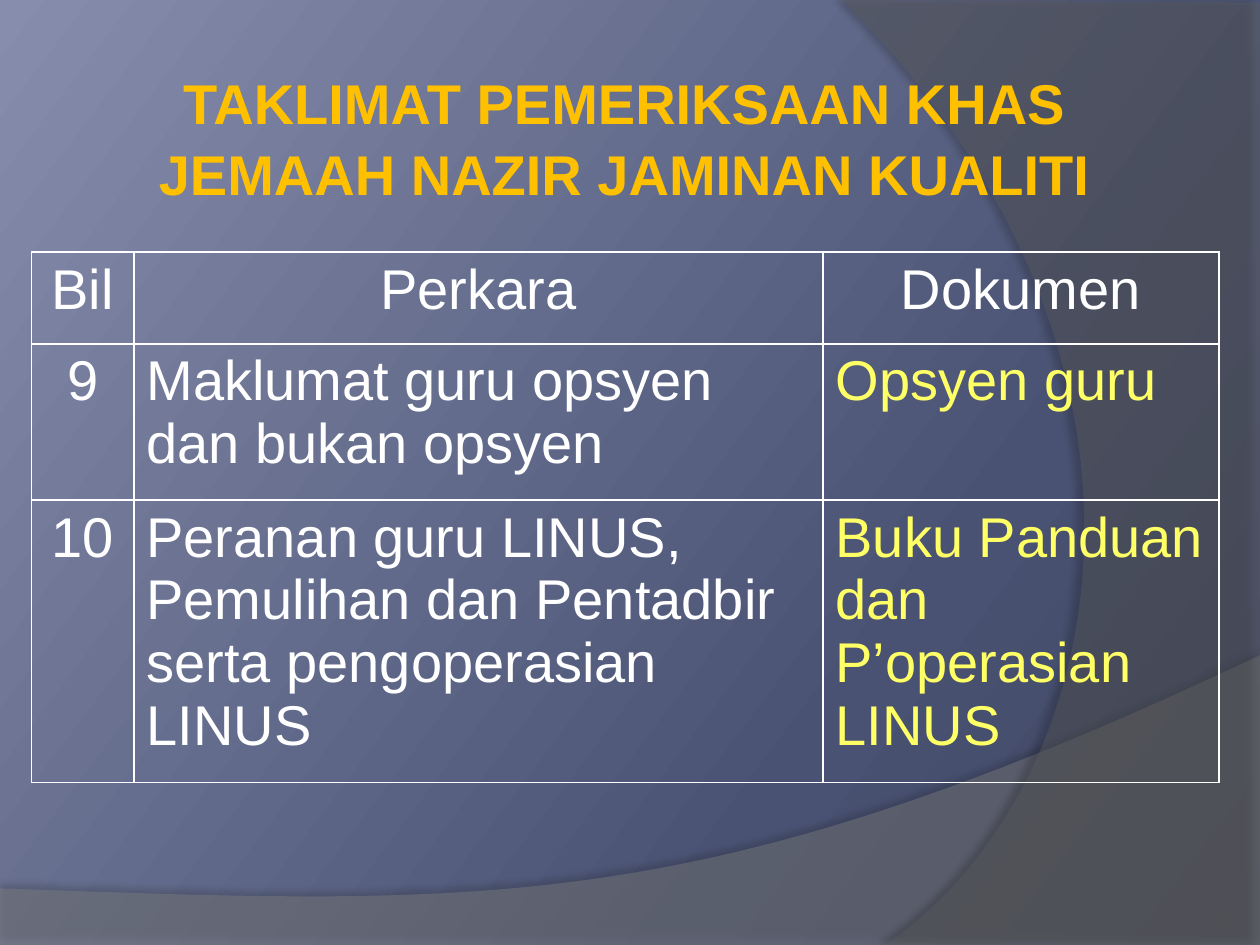
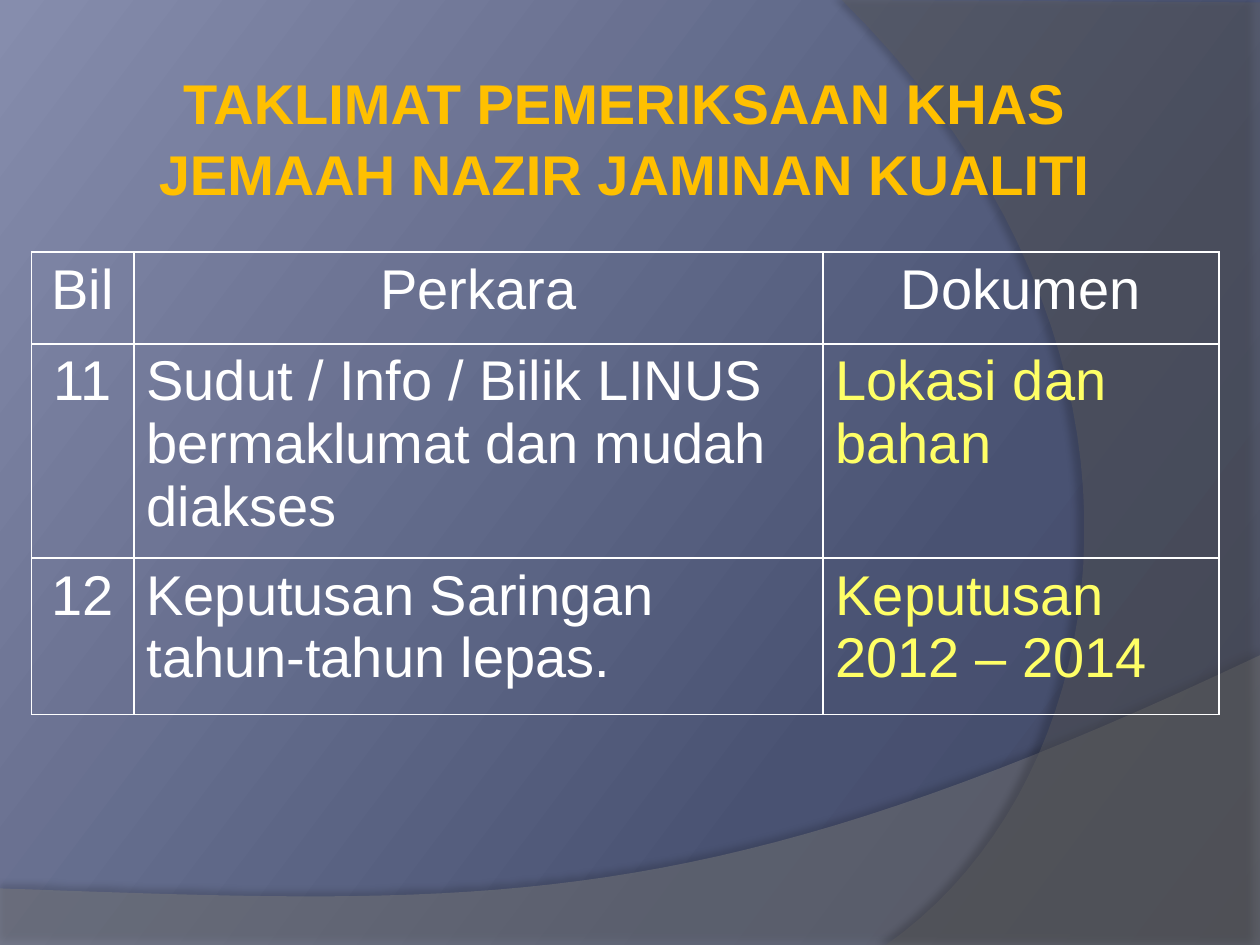
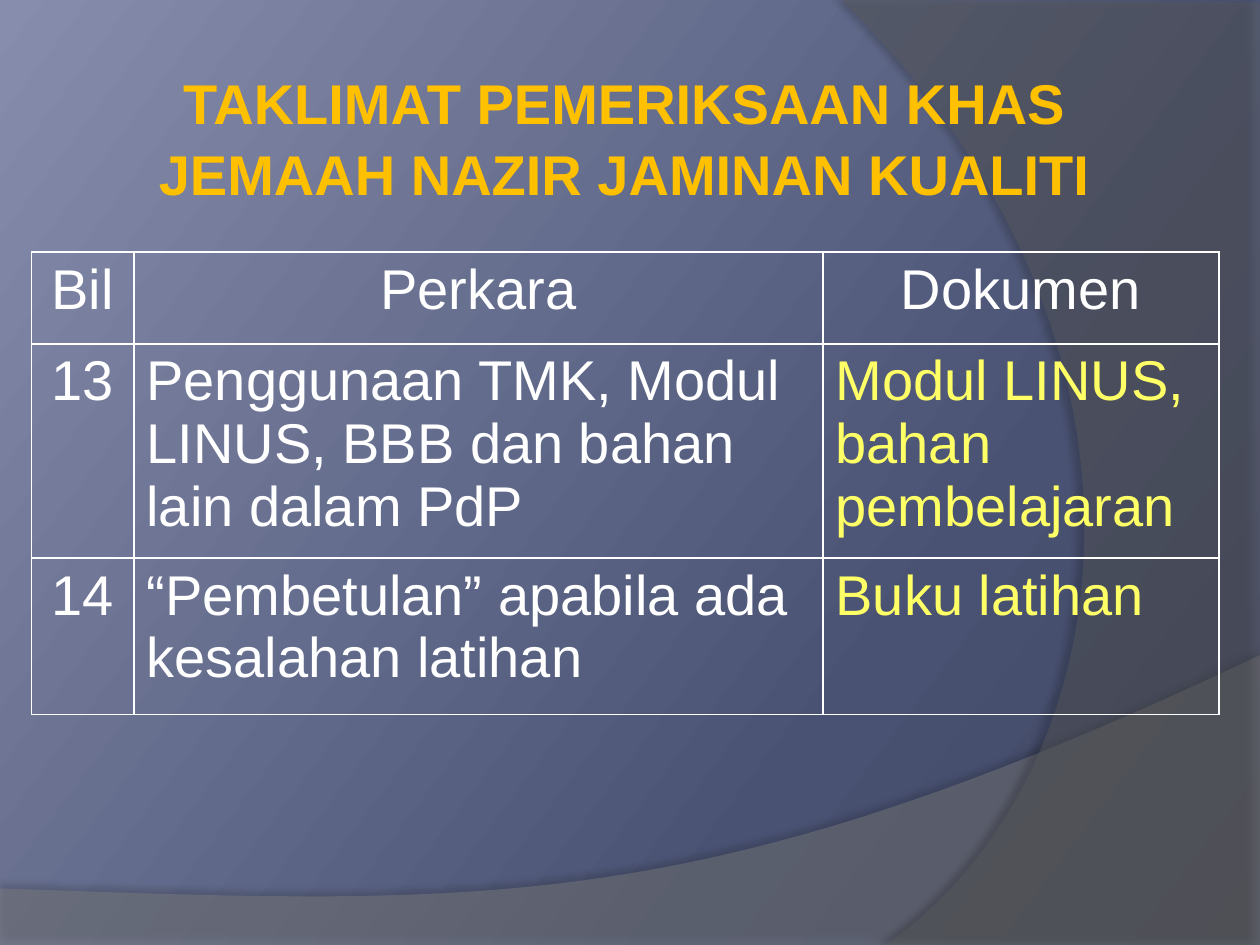
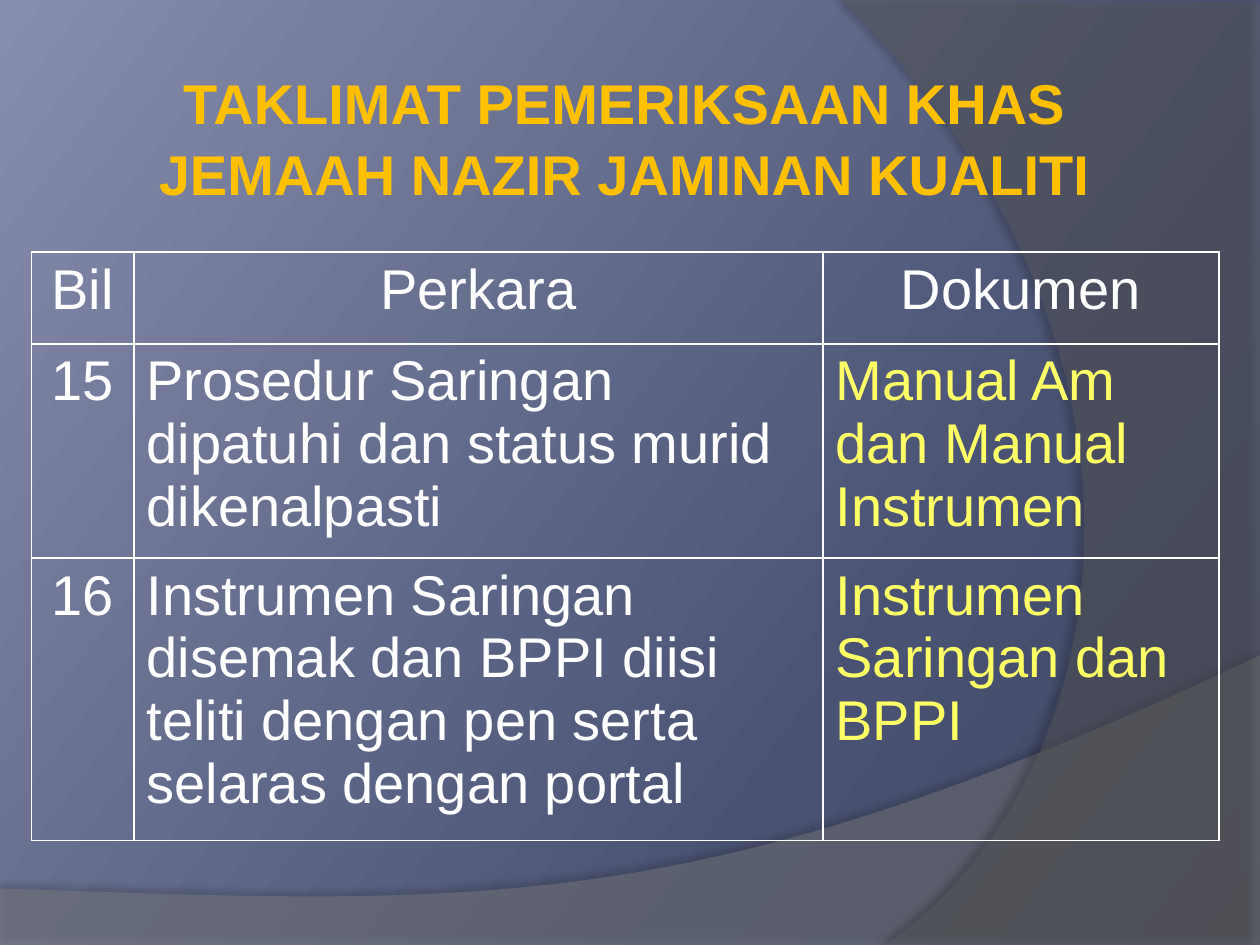
"""Four briefing slides, each with a shared title, curved bands and a checklist table."""
from copy import deepcopy

from lxml.etree import SubElement
from pptx import Presentation
from pptx.dml.color import RGBColor as RGB
from pptx.enum.text import MSO_AUTO_SIZE, PP_ALIGN as ALIGN
from pptx.oxml.ns import qn
from pptx.util import Cm, Pt

TITLE = ["TAKLIMAT PEMERIKSAAN KHAS", "JEMAAH NAZIR JAMINAN KUALITI"]
HEADER = ("Bil", "Perkara", "Dokumen")
SLIDES = [
    [("9", "Maklumat guru opsyen dan bukan opsyen", "Opsyen guru"),
     ("10", "Peranan guru LINUS, Pemulihan dan Pentadbir serta pengoperasian LINUS",
      "Buku Panduan dan P’operasian LINUS")],
    [("11", "Sudut / Info / Bilik LINUS bermaklumat dan mudah diakses", "Lokasi dan bahan"),
     ("12", "Keputusan Saringan tahun-tahun lepas.", "Keputusan 2012 – 2014")],
    [("13", "Penggunaan TMK, Modul LINUS, BBB dan bahan lain dalam PdP",
      "Modul LINUS, bahan pembelajaran"),
     ("14", "“Pembetulan” apabila ada kesalahan latihan", "Buku latihan")],
    [("15", "Prosedur Saringan dipatuhi dan status murid dikenalpasti",
      "Manual Am dan Manual Instrumen"),
     ("16", "Instrumen Saringan disemak dan BPPI diisi teliti dengan pen serta selaras dengan portal",
      "Instrumen Saringan dan BPPI")],
]
ROW_LINES = [(2, 4), (3, 2), (3, 2), (3, 4)]
LINE_HEIGHTS = {1: 1.85, 2: 3.15, 3: 4.32, 4: 5.69}
COL_WIDTHS = (2.06, 13.89, 7.98)

FONT = "Arial"
SIZE = Pt(32)
WHITE = RGB(0xFF, 0xFF, 0xFF)
GOLD = RGB(0xFF, 0xC0, 0x00)
YELLOW = RGB(0xFF, 0xFF, 0x66)
BACKDROP = [(0, RGB(0x3D, 0x44, 0x60)), (0.3, RGB(0x49, 0x52, 0x72)), (1, RGB(0x86, 0x8D, 0xAD))]
BANDS = [
    dict(corners=[(0, 17.91), (0, 19.05), (25.4, 19.05), (25.4, 13.21)],
         curve=[(14.2, 18.52), (9.93, 18.26), (0, 17.91)],
         color=RGB(0x7F, 0x7F, 0x7F), opacity=45, shadow=(35, 3.5, 270)),
    dict(corners=[(25.4, 0.05), (25.4, 19.05), (17.86, 19.05)],
         curve=[(22.63, 15.72), (24.05, 6.99), (16.97, 0)],
         color=RGB(0x5E, 0x5E, 0x5E), opacity=40, shadow=(45, 4, 180)),
]
CURVE_STEPS = 40


def set_backdrop(master):
    fill = master.background.fill
    fill.gradient()
    fill.gradient_angle = 143
    stops = master.element.find(".//" + qn("a:gsLst"))
    stops.insert(1, deepcopy(stops[0]))
    for stop, (position, color) in zip(fill.gradient_stops, BACKDROP):
        stop.position = position
        stop.color.rgb = color


def bezier(points, t):
    u = 1 - t
    weights = (u ** 3, 3 * u * u * t, 3 * u * t * t, t ** 3)
    return tuple(sum(w * p[axis] for w, p in zip(weights, points)) for axis in (0, 1))


def set_alpha(color, percent):
    SubElement(color, qn("a:alpha"), val=str(percent * 1000))


def add_band(slide, corners, curve, color, opacity, shadow):
    control = [corners[-1], *curve]
    outline = corners + [bezier(control, i / CURVE_STEPS) for i in range(1, CURVE_STEPS + 1)]
    start, *rest = [(Cm(x), Cm(y)) for x, y in outline]
    builder = slide.shapes.build_freeform(*start)
    builder.add_line_segments(rest, close=True)
    sp = builder.convert_to_shape()
    sp.fill.solid()
    sp.fill.fore_color.rgb = color
    sp.line.fill.background()
    sp.shadow.inherit = False
    props = sp.element.spPr
    set_alpha(props.find(".//" + qn("a:srgbClr")), opacity)
    strength, distance, angle = shadow
    outer = SubElement(props.find(qn("a:effectLst")), qn("a:outerShdw"), blurRad=str(Pt(4)),
                       dist=str(Pt(distance)), dir=str(angle * 60000), rotWithShape="0")
    set_alpha(SubElement(outer, qn("a:srgbClr"), val="000000"), strength)


def style(p, color, align, bold=False):
    p.alignment = align
    p.font.name, p.font.size, p.font.bold = FONT, SIZE, bold
    p.font.color.rgb = color


def add_title(slide):
    tf = slide.shapes.add_textbox(Cm(0.84), Cm(1.17), Cm(23.5), Cm(3)).text_frame
    tf.word_wrap = True
    tf.auto_size = MSO_AUTO_SIZE.SHAPE_TO_FIT_TEXT
    tf.text = "\n".join(TITLE)
    for p in tf.paragraphs:
        style(p, GOLD, ALIGN.CENTER, bold=True)
        p.line_spacing = 1.06


def add_borders(cell):
    props = cell._tc.get_or_add_tcPr()
    for i, side in enumerate(("lnL", "lnR", "lnT", "lnB")):
        line = props.makeelement(qn("a:" + side), {"w": str(Pt(1))})
        props.insert(i, line)
        SubElement(SubElement(line, qn("a:solidFill")), qn("a:srgbClr"), val=str(WHITE))


def add_checklist(slide, items, lines):
    rows = [HEADER, *items]
    heights = [LINE_HEIGHTS[n] for n in (1, *lines)]
    table = slide.shapes.add_table(len(rows), len(HEADER), Cm(0.64), Cm(5.08),
                                   Cm(sum(COL_WIDTHS)), Cm(sum(heights))).table
    table.first_row = table.horz_banding = False
    for column, width in zip(table.columns, COL_WIDTHS):
        column.width = Cm(width)
    for r, (texts, height) in enumerate(zip(rows, heights)):
        table.rows[r].height = Cm(height)
        for c, text in enumerate(texts):
            cell = table.cell(r, c)
            cell.text = text
            cell.fill.background()
            add_borders(cell)
            style(cell.text_frame.paragraphs[0], YELLOW if r and c == 2 else WHITE,
                  ALIGN.LEFT if r and c else ALIGN.CENTER)


def main():
    prs = Presentation()
    prs.slide_width, prs.slide_height = Cm(25.4), Cm(19.05)
    set_backdrop(prs.slide_master)
    for items, lines in zip(SLIDES, ROW_LINES):
        slide = prs.slides.add_slide(prs.slide_layouts[6])
        for band in BANDS:
            add_band(slide, **band)
        add_title(slide)
        add_checklist(slide, items, lines)
    prs.save("out.pptx")


if __name__ == "__main__":
    main()
